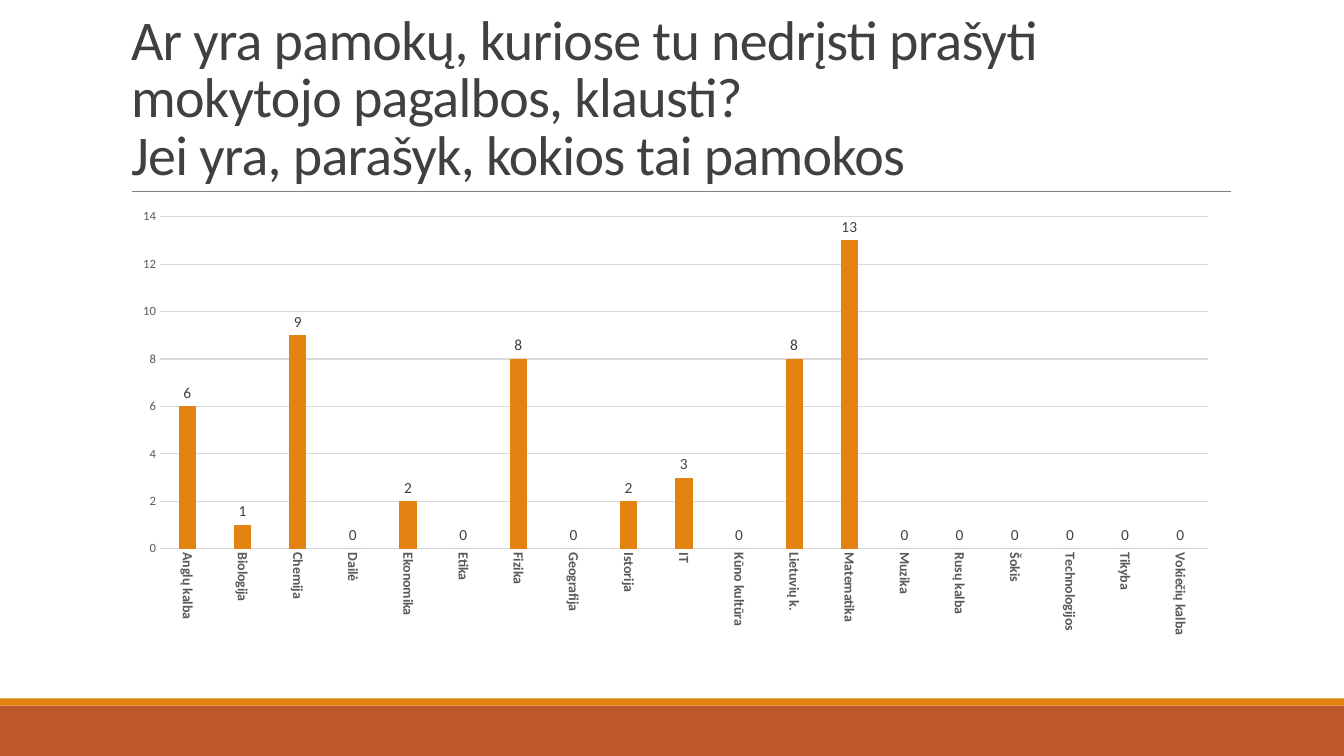
from lxml import etree
from pptx import Presentation
from pptx.chart.data import CategoryChartData
from pptx.dml.color import RGBColor
from pptx.enum.chart import XL_CHART_TYPE, XL_LABEL_POSITION, XL_TICK_MARK
from pptx.enum.shapes import MSO_CONNECTOR, MSO_SHAPE
from pptx.enum.text import MSO_ANCHOR, MSO_AUTO_SIZE, PP_ALIGN
from pptx.oxml.ns import qn
from pptx.util import Inches, Pt

CLUSTERED = XL_CHART_TYPE.COLUMN_CLUSTERED
OUTSIDE_END = XL_LABEL_POSITION.OUTSIDE_END
NO_TICK = XL_TICK_MARK.NONE
STRAIGHT = MSO_CONNECTOR.STRAIGHT
RECTANGLE = MSO_SHAPE.RECTANGLE
BOTTOM = MSO_ANCHOR.BOTTOM
NO_FIT = MSO_AUTO_SIZE.NONE
LEFT = PP_ALIGN.LEFT
TITLE_ONLY = 5

TITLE = (
    "Ar yra pamokų, kuriose tu nedrįsti prašyti mokytojo pagalbos, klausti? \v"
    "Jei yra, parašyk, kokios tai pamokos"
)
ANSWERS = {
    "Anglų kalba": 6,
    "Biologija": 1,
    "Chemija": 9,
    "Dailė": 0,
    "Ekonomika": 2,
    "Etika": 0,
    "Fizika": 8,
    "Geografija": 0,
    "Istorija": 2,
    "IT": 3,
    "Kūno kultūra": 0,
    "Lietuvių k.": 8,
    "Matematika": 13,
    "Muzika": 0,
    "Rusų kalba": 0,
    "Šokis": 0,
    "Technologijos": 0,
    "Tikyba": 0,
    "Vokiečių kalba": 0,
}


def color(value):
    return RGBColor.from_string(value)


class SlideBuilder:
    font_name = "Calibri"
    orange = "E48312"
    rust = "BD582C"
    dark = "404040"
    gray = "595959"
    rule_gray = "808080"
    grid_gray = "D9D9D9"

    def __init__(self, page):
        self.page = page

    def style_font(self, font, size, shade, bold=False):
        font.name = self.font_name
        font.size = Pt(size)
        font.bold = bold
        font.color.rgb = color(shade)

    def style_line(self, line, shade, width):
        line.color.rgb = color(shade)
        line.width = Pt(width)

    def band(self, top, height, shade):
        box = self.page.shapes.add_shape(
            RECTANGLE, 0, Inches(top), Inches(13.33), Inches(height)
        )
        box.shadow.inherit = False
        box.fill.solid()
        box.fill.fore_color.rgb = color(shade)
        box.line.fill.background()

    def rule(self, left, right, top):
        connector = self.page.shapes.add_connector(
            STRAIGHT, Inches(left), Inches(top), Inches(right), Inches(top)
        )
        self.style_line(connector.line, self.rule_gray, 0.5)
        etree.SubElement(connector._element.spPr, qn("a:effectLst"))

    def title(self, text, left, top, width, height):
        box = self.page.shapes.title
        box.left, box.top = Inches(left), Inches(top)
        box.width, box.height = Inches(width), Inches(height)
        frame = box.text_frame
        frame.text = text
        frame.word_wrap = True
        frame.auto_size = NO_FIT
        frame.vertical_anchor = BOTTOM
        para = frame.paragraphs[0]
        para.alignment = LEFT
        para.line_spacing = 0.85
        para.space_before = Pt(0)
        for span in para.runs:
            self.style_font(span.font, 40, self.dark)
            span._r.get_or_add_rPr().set("spc", "-50")

    def column_chart(self, answers, left, top, width, height):
        data = CategoryChartData()
        data.categories = list(answers)
        data.add_series("Series 1", list(answers.values()))
        chart = self.page.shapes.add_chart(
            CLUSTERED, Inches(left), Inches(top), Inches(width), Inches(height), data
        ).chart
        chart.has_legend = False
        chart.has_title = False
        self.style_font(chart.font, 10, "000000")
        self.style_axes(chart)

        plot = chart.plots[0]
        plot.vary_by_categories = False
        plot.gap_width = 219
        plot.overlap = -27
        series = plot.series[0]
        series.format.fill.solid()
        series.format.fill.fore_color.rgb = color(self.orange)
        labels = series.data_labels
        labels.show_value = True
        labels.position = OUTSIDE_END
        self.style_font(labels.font, 11, self.dark)

    def style_axes(self, chart):
        subjects, counts = chart.category_axis, chart.value_axis
        for axis in (subjects, counts):
            axis.major_tick_mark = NO_TICK
            axis.minor_tick_mark = NO_TICK
        self.style_font(subjects.tick_labels.font, 10, self.gray, bold=True)
        self.style_line(subjects.format.line, self.grid_gray, 0.75)
        subjects.has_major_gridlines = False
        rotation = subjects._element.find(qn("c:txPr")).find(qn("a:bodyPr"))
        rotation.set("rot", "5400000")
        rotation.set("vert", "horz")

        self.style_font(counts.tick_labels.font, 9, self.gray)
        counts.format.line.fill.background()
        counts.has_major_gridlines = True
        self.style_line(counts.major_gridlines.format.line, self.grid_gray, 0.75)
        counts.minimum_scale = 0
        counts.maximum_scale = 14
        counts.major_unit = 2


def main():
    deck = Presentation()
    deck.slide_width = Inches(13.33)
    deck.slide_height = Inches(7.5)
    page = deck.slides.add_slide(deck.slide_layouts[TITLE_ONLY])
    builder = SlideBuilder(page)
    builder.band(7, 0.5, builder.rust)
    builder.band(6.93, 0.07, builder.orange)
    builder.rule(1.31, 12.21, 1.9)
    builder.title(TITLE, 1.2, 0.31, 11, 1.59)
    builder.column_chart(ANSWERS, 1.2, 2.02, 11, 4.4)
    deck.save("out.pptx")


if __name__ == "__main__":
    main()
